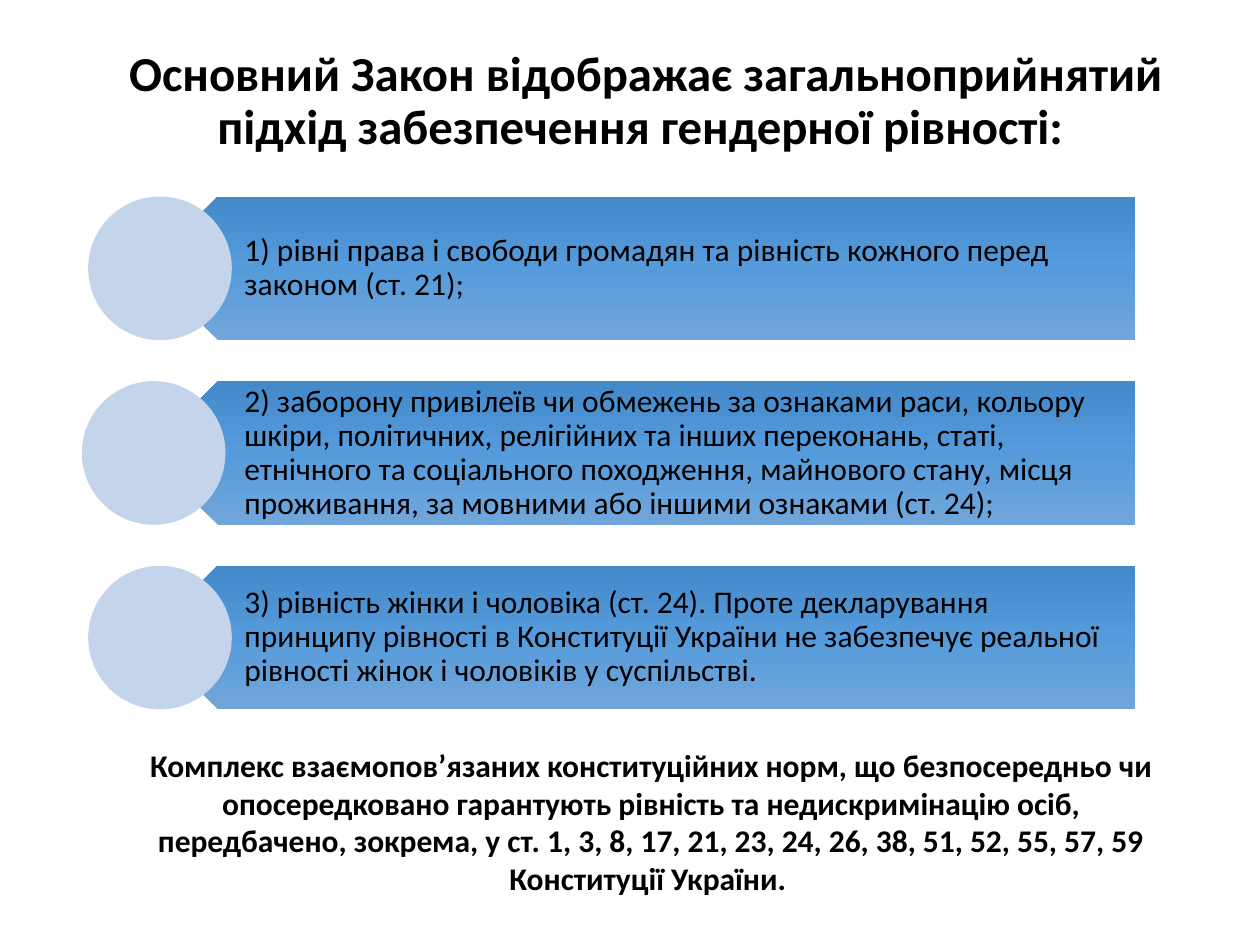
import pptx
import pptx.util
import pptx.dml.color
import pptx.enum.shapes
import pptx.enum.text
import pptx.oxml
import pptx.oxml.ns

KIND = pptx.enum.shapes.MSO_SHAPE
ALIGN = pptx.enum.text.PP_ALIGN
ANCHOR = pptx.enum.text.MSO_ANCHOR
COLS, ROWS = 100, 75

TITLE = "Основний Закон відображає загальноприйнятий підхід забезпечення гендерної рівності: "
POINTS = [
    "1) рівні права і свободи громадян та рівність кожного перед законом (ст. 21);",
    "2) заборону привілеїв чи обмежень за ознаками раси, кольору шкіри, політичних, "
    "релігійних та інших переконань, статі, етнічного та соціального походження, "
    "майнового стану, місця проживання, за мовними або іншими ознаками (ст. 24);",
    "3) рівність жінки і чоловіка (ст. 24). Проте декларування принципу рівності в "
    "Конституції України не забезпечує реальної рівності жінок і чоловіків у суспільстві.",
]
NOTE = (
    "Комплекс взаємопов’язаних конституційних норм, що безпосередньо чи опосередковано "
    "гарантують рівність та недискримінацію осіб, передбачено, зокрема, у ст. 1, 3, 8, 17, "
    "21, 23, 24, 26, 38, 51, 52, 55, 57, 59 Конституції України. "
)


def color(code):
    return pptx.dml.color.RGBColor.from_string(code)


class Page:
    font = "Calibri"
    ink = "000000"
    disc = "C4D5EB"
    shades = [(0, "71A6DB"), (50, "559BDB"), (100, "448ACA")]

    def __init__(self, deck):
        self.deck = deck
        self.slide = deck.slides.add_slide(deck.slide_layouts[5])

    def place(self, left, top, width, height):
        """Turn grid columns and rows into slide lengths."""
        col = self.deck.slide_width / COLS
        row = self.deck.slide_height / ROWS
        return [round(n) for n in (left * col, top * row, width * col, height * row)]

    def fill_text(self, frame, text, size, bold=False, align=ALIGN.LEFT, space=None):
        frame.word_wrap = True
        para = frame.paragraphs[0]
        para.text = text
        para.alignment = align
        para.line_spacing = space
        para.font.name = self.font
        para.font.size = pptx.util.Pt(size)
        para.font.bold = bold
        para.font.color.rgb = color(self.ink)

    def title(self, text, *box):
        shape = self.slide.shapes.title
        shape.left, shape.top, shape.width, shape.height = self.place(*box)
        frame = shape.text_frame
        frame.auto_size = pptx.enum.text.MSO_AUTO_SIZE.NONE
        frame.vertical_anchor = ANCHOR.MIDDLE
        self.fill_text(frame, text, 27.9, True, ALIGN.CENTER, 0.9)

    def shape(self, kind, *box):
        shape = self.slide.shapes.add_shape(kind, *self.place(*box))
        shape.shadow.inherit = False
        shape.line.fill.background()
        return shape

    def arrow(self, *box):
        """Add a left-pointing bar shaded from top to bottom."""
        shape = self.shape(KIND.PENTAGON, *box)
        shape.rotation = 180
        shape.fill.gradient()
        shape.fill.gradient_angle = 270
        stops = shape.element.find(".//" + pptx.oxml.ns.qn("a:gsLst"))
        for stop in list(stops):
            stops.remove(stop)
        for share, code in self.shades:
            stops.append(pptx.oxml.parse_xml(
                f'<a:gs {pptx.oxml.ns.nsdecls("a")} pos="{share * 1000}">'
                f'<a:srgbClr val="{code}"/></a:gs>'))

    def circle(self, *box):
        shape = self.shape(KIND.OVAL, *box)
        shape.fill.solid()
        shape.fill.fore_color.rgb = color(self.disc)

    def label(self, text, *box):
        frame = self.slide.shapes.add_textbox(*self.place(*box)).text_frame
        frame.vertical_anchor = ANCHOR.MIDDLE
        frame.margin_left = pptx.util.Inches(0.5)
        frame.margin_right = pptx.util.Inches(0.14)
        frame.margin_top = frame.margin_bottom = pptx.util.Inches(0.07)
        self.fill_text(frame, text, 18, space=0.9)

    def note(self, text, *box):
        frame = self.slide.shapes.add_textbox(*self.place(*box)).text_frame
        self.fill_text(frame, text, 18, True, ALIGN.CENTER)
        frame.auto_size = pptx.enum.text.MSO_AUTO_SIZE.SHAPE_TO_FIT_TEXT


def main():
    deck = pptx.Presentation()
    deck.slide_width = pptx.util.Inches(10)
    deck.slide_height = pptx.util.Inches(7.5)
    page = Page(deck)
    page.title(TITLE, 4.9, 4, 92.7, 8.2)
    first, step, size = 15.6, 14.65, 11.4
    for i, text in enumerate(POINTS):
        top = first + i * step
        page.arrow(11.6, top, 78.5, size)
        page.label(text, 14.4, top, 75.6, size)
        page.circle(6.5 if i == 1 else 7, top, size, size)
    page.note(NOTE, 9.1, 58.7, 85.2, 13.1)
    deck.save("out.pptx")


if __name__ == "__main__":
    main()
